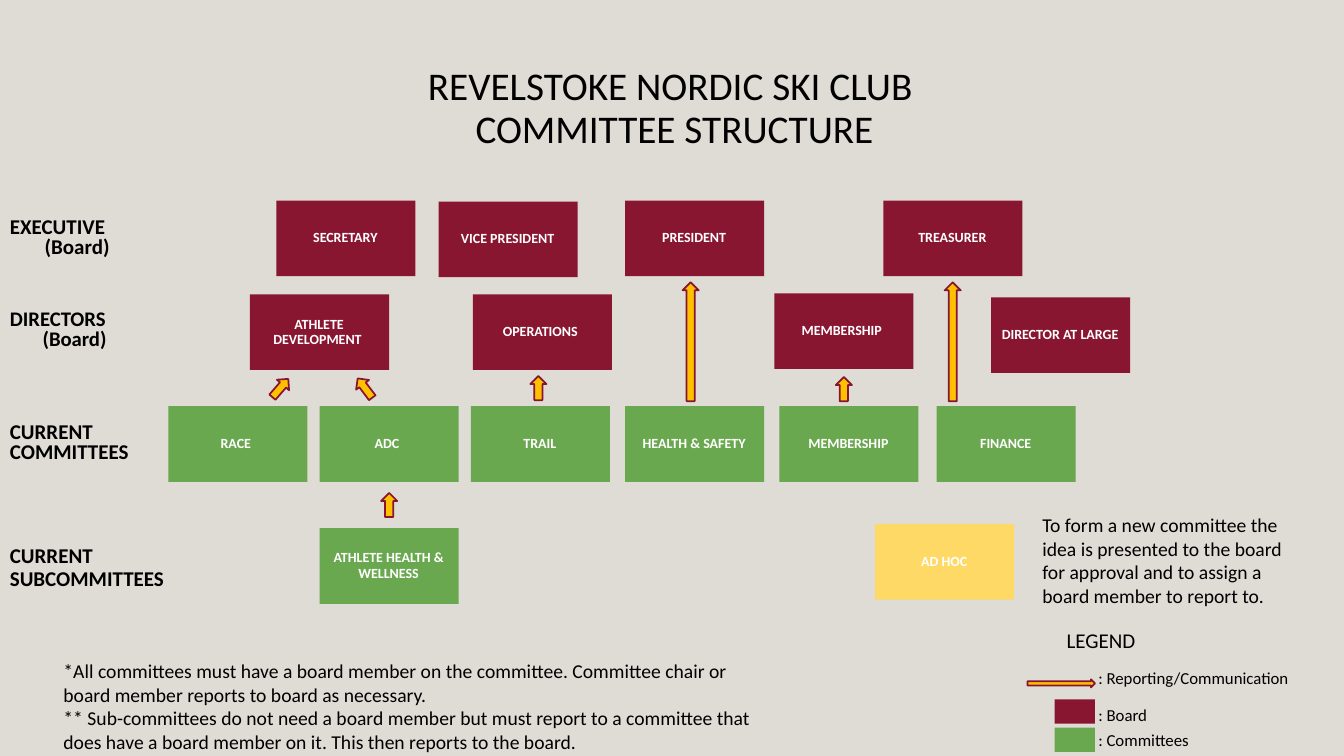
import pptx
import pptx.util
import pptx.dml.color
import pptx.enum.shapes
import pptx.enum.text

WIDTH, HEIGHT = 13.33, 7.5
FONT = "Calibri"
BLACK, WHITE, BACKGROUND = "000000", "FFFFFF", "DFDBD5"
BOARD, COMMITTEE, AD_HOC = "891631", "6AA84F", "FFD966"
ARROW, ARROW_EDGE = "FFC000", "851530"
BOX_W, BOX_H = 10.35, 10
LEFT, CENTER = pptx.enum.text.PP_ALIGN.LEFT, pptx.enum.text.PP_ALIGN.CENTER
SHAPE = pptx.enum.shapes.MSO_SHAPE
COMMITTEE_ROW = 53.73

BOXES = [
    (BOARD, [("SECRETARY", 20.56, 26.53), ("VICE PRESIDENT", 32.63, 26.67),
             ("PRESIDENT", 46.51, 26.53), ("TREASURER", 65.72, 26.53),
             ("ATHLETE DEVELOPMENT ", 18.6, 38.93), ("OPERATIONS ", 35.18, 38.93),
             ("MEMBERSHIP ", 57.61, 38.8), ("DIRECTOR AT LARGE", 73.74, 39.33)]),
    (COMMITTEE, [("RACE ", 12.53, COMMITTEE_ROW), ("ADC ", 23.78, COMMITTEE_ROW),
                 ("TRAIL", 35.03, COMMITTEE_ROW), ("HEALTH & SAFETY", 46.51, COMMITTEE_ROW),
                 ("MEMBERSHIP", 57.99, COMMITTEE_ROW), ("FINANCE", 69.69, COMMITTEE_ROW),
                 ("ATHLETE HEALTH & WELLNESS", 23.78, 69.87)]),
    (AD_HOC, [("AD HOC", 65.12, 69.33)]),
]
ROW_LABELS = [
    (["EXECUTIVE", "(Board)"], 28.27, 11.48, 15, 0.8),
    (["DIRECTORS", "(Board)"], 40.4, 11.1, 14.8, 0.8),
    (["CURRENT COMMITTEES"], 55.33, 13.88, 15, 0.8),
    (["CURRENT SUBCOMMITTEES"], 71.47, 16.35, 15, 0.9),
]
SHORT, LONG = 1.8, 8.85
ARROWS = [
    (20.86, 51.33, SHORT, 311), (27.16, 51.33, SHORT, 233),
    (40.06, 51.33, SHORT, 270), (62.79, 51.47, SHORT, 270),
    (28.96, 66.8, SHORT, 270), (51.39, 45.2, LONG, 270), (70.89, 45.2, LONG, 270),
]
NOTES = [
    "*All committees must have a board member on the committee. Committee chair or "
    "board member reports to board as necessary.",
    "** Sub-committees do not need a board member but must report to a committee that "
    "does have a board member on it. This then reports to the board.",
]
NEW_COMMITTEE = ("To form a new committee the idea is presented to the board for approval "
                 "and to assign a board member to report to.")
LEGEND_LABELS = [(": Reporting/Communication", 87.73), (": Board", 92.53), (": Committees", 95.87)]


def rgb(value):
    """Return the colour for a hex string."""
    return pptx.dml.color.RGBColor.from_string(value)


def apply(target, values):
    """Set each attribute of the target from a dict."""
    for name, value in values.items():
        setattr(target, name, value)


def place(x, y, w, h):
    """Turn percentages of the slide into left, top, width and height."""
    return [pptx.util.Inches(share * side / 100)
            for share, side in zip((x, y, w, h), (WIDTH, HEIGHT) * 2)]


def write(tf, lines, size, color=BLACK, bold=False, aligns=(LEFT, LEFT), spacing=1.0,
          insets=(7.2, 3.6, 7.2, 3.6), middle=False):
    """Fill a text frame with one formatted paragraph per line."""
    anchor = pptx.enum.text.MSO_ANCHOR
    sides = ("margin_left", "margin_top", "margin_right", "margin_bottom")
    apply(tf, dict(zip(sides, map(pptx.util.Pt, insets)), word_wrap=True,
                   vertical_anchor=anchor.MIDDLE if middle else anchor.TOP))
    for i, (line, align) in enumerate(zip(lines, aligns)):
        p = tf.paragraphs[0] if i == 0 else tf.add_paragraph()
        p.text = line
        apply(p, {"alignment": align, "line_spacing": spacing})
        for r in p.runs:
            apply(r.font, {"name": FONT, "size": pptx.util.Pt(size), "bold": bold})
            r.font.color.rgb = rgb(color)


def add_text(s, area, lines, size, **style):
    """Add a text box."""
    write(s.shapes.add_textbox(*place(*area)).text_frame, lines, size, **style)


def add_block(s, kind, area, fill, edge=None):
    """Add a filled shape, outlined only when an edge colour is given."""
    sp = s.shapes.add_shape(kind, *place(*area))
    sp.shadow.inherit = False
    sp.fill.solid()
    sp.fill.fore_color.rgb = rgb(fill)
    if edge:
        sp.line.color.rgb = rgb(edge)
        sp.line.width = pptx.util.Pt(1.25)
    else:
        sp.line.fill.background()
    return sp


def add_box(s, name, x, y, fill):
    """Add a named box of the chart."""
    sp = add_block(s, SHAPE.RECTANGLE, (x, y, BOX_W, BOX_H), fill)
    write(sp.text_frame, [name], 10, color=WHITE, bold=True, aligns=[CENTER],
          spacing=0.9, insets=(0, 0.7, 0.7, 0.7), middle=True)


def add_arrow(s, x, y, length, angle, thickness=2.13):
    """Add a block arrow around its centre."""
    area = (x - length / 2, y - thickness / 2, length, thickness)
    add_block(s, SHAPE.RIGHT_ARROW, area, ARROW, ARROW_EDGE).rotation = angle


def add_legend(s):
    """Add the legend with its arrow, swatches and labels."""
    add_text(s, (78.62, 82.4, 11.18, 4.67), ["LEGEND"], 15)
    add_arrow(s, 78.96, 90.4, 5.03, 0, thickness=1.07)
    for y, fill in ((92.53, BOARD), (96.27, COMMITTEE)):
        add_block(s, SHAPE.RECTANGLE, (78.47, y, 3, 3.2), fill)
    for label, y in LEGEND_LABELS:
        add_text(s, (80.98, y, 17.4, 4), [label], 12)


def main():
    """Build the committee structure slide."""
    prs = pptx.Presentation()
    apply(prs, {"slide_width": pptx.util.Inches(WIDTH), "slide_height": pptx.util.Inches(HEIGHT)})
    s = prs.slides.add_slide(prs.slide_layouts[6])
    s.background.fill.solid()
    s.background.fill.fore_color.rgb = rgb(BACKGROUND)

    add_text(s, (10.8, 6.8, 78.77, 15.33), ["REVELSTOKE NORDIC SKI CLUB \vCOMMITTEE STRUCTURE"],
             28, aligns=[CENTER], spacing=0.9, insets=(0, 3.6, 0, 3.6), middle=True)
    for lines, y, w, size, spacing in ROW_LABELS:
        add_text(s, (0, y, w, 6.8), lines, size, bold=True, aligns=(LEFT, CENTER), spacing=spacing)
    for fill, boxes in BOXES:
        for name, x, y in boxes:
            add_box(s, name, x, y, fill)
    for arrow in ARROWS:
        add_arrow(s, *arrow)
    add_text(s, (3.98, 85.87, 54.01, 15.2), NOTES, 14, insets=[7.2] * 4)
    add_text(s, (76.82, 66.53, 20.33, 15.2), [NEW_COMMITTEE], 14, insets=[7.2] * 4)
    add_legend(s)
    prs.save("out.pptx")


if __name__ == "__main__":
    main()
